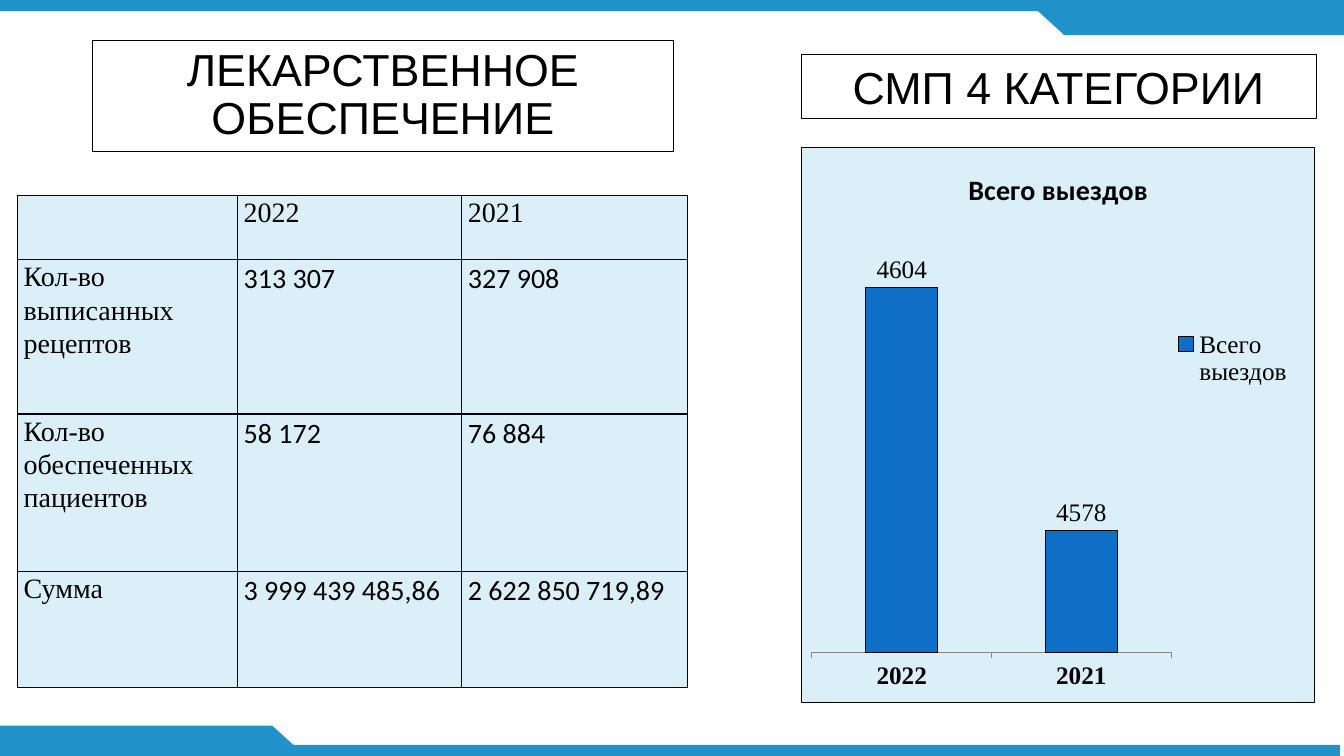
"""Build a slide with a medicine supply table and an ambulance call chart."""
from dataclasses import dataclass

from lxml import etree
from pptx import Presentation
from pptx.chart import data as cd
from pptx.dml import color
from pptx.enum import chart as ch, shapes, text
from pptx.oxml import ns
from pptx.util import Pt

BLACK, BAND, PALE, BAR = "000000", "2191C9", "DBEFF9", "0F6FC6"
SERIF, SANS = "Times New Roman", "Calibri"


@dataclass
class Box:
    x: float
    y: float
    w: float
    h: float

    def lengths(self) -> tuple:
        return Pt(self.x), Pt(self.y), Pt(self.w), Pt(self.h)


@dataclass
class Band:
    box: Box
    kind: shapes.MSO_SHAPE = shapes.MSO_SHAPE.RECTANGLE
    turn: float = 0


@dataclass
class Heading:
    words: str
    box: Box
    spacing: float


MERGE = shapes.MSO_SHAPE.FLOWCHART_MERGE
BANDS = [
    Band(Box(0, 0, 960, 8)),
    Band(Box(0, 532, 957, 8)),
    Band(Box(759.6, 3.6, 200.4, 21.6)),
    Band(Box(736, 3, 47.5, 21.6), MERGE),
    Band(Box(0, 518.4, 194.4, 21.6)),
    Band(Box(170.8, 518.4, 47.5, 21.6), MERGE, 180),
]
HEADINGS = [
    Heading("ЛЕКАРСТВЕННОЕ ОБЕСПЕЧЕНИЕ", Box(66, 28.8, 415.2, 79.6), 0.9),
    Heading("СМП 4 КАТЕГОРИИ", Box(572.2, 38.8, 368, 46), 1),
]
TABLE_BOX = Box(12.4, 139.5, 478.8, 351.4)
COLUMNS = [157.2, 160.2, 161.4]
ROWS = [46, 110.2, 112.4, 82.8]
CELLS = [
    ["", "2022", "2021"],
    ["Кол-во выписанных рецептов", "313 307", "327 908"],
    ["Кол-во обеспеченных пациентов", "58 172", "76 884"],
    ["Сумма", "3 999 439 485,86", "2 622 850 719,89"],
]
CHART_BOX = Box(572.2, 105.3, 367.4, 396.6)


def rgb(code: str) -> color.RGBColor:
    return color.RGBColor.from_string(code)


def style(font, name: str, size: float, bold: bool = False) -> None:
    font.name, font.size, font.bold = name, Pt(size), bold
    font.color.rgb = rgb(BLACK)


def paint(fmt, fill: str) -> None:
    fmt.fill.solid()
    fmt.fill.fore_color.rgb = rgb(fill)


def outline(line) -> None:
    line.color.rgb = rgb(BLACK)
    line.width = Pt(0.75)


def add_band(s, band: Band) -> None:
    sp = s.shapes.add_shape(band.kind, *band.box.lengths())
    sp.shadow.inherit = False
    sp.rotation = band.turn
    paint(sp, BAND)
    sp.line.fill.background()


def add_heading(s, heading: Heading) -> None:
    sp = s.shapes.add_shape(shapes.MSO_SHAPE.RECTANGLE, *heading.box.lengths())
    sp.shadow.inherit = False
    sp.fill.background()
    outline(sp.line)
    tf = sp.text_frame
    tf.word_wrap = True
    tf.vertical_anchor = text.MSO_ANCHOR.MIDDLE
    p = tf.paragraphs[0]
    p.text = heading.words
    p.alignment = text.PP_ALIGN.CENTER
    p.line_spacing = heading.spacing
    style(p.font, "Arial", 32)


def add_borders(cell) -> None:
    props = cell._tc.get_or_add_tcPr()
    for side in ("a:lnL", "a:lnR", "a:lnT", "a:lnB"):
        line = etree.SubElement(props, ns.qn(side), w=str(Pt(1)))
        fill = etree.SubElement(line, ns.qn("a:solidFill"))
        etree.SubElement(fill, ns.qn("a:srgbClr"), val=BLACK)


def add_supply_table(s) -> None:
    table = s.shapes.add_table(len(ROWS), len(COLUMNS), *TABLE_BOX.lengths()).table
    table.first_row = table.horz_banding = False
    for column, width in zip(table.columns, COLUMNS):
        column.width = Pt(width)
    for i, (row, height) in enumerate(zip(table.rows, ROWS)):
        row.height = Pt(height)
        for j, cell in enumerate(row.cells):
            add_borders(cell)
            paint(cell, PALE)
            cell.margin_left = cell.margin_right = Pt(4.5)
            cell.margin_top = cell.margin_bottom = 0
            p = cell.text_frame.paragraphs[0]
            p.text = CELLS[i][j]
            p.alignment = text.PP_ALIGN.JUSTIFY
            p.line_spacing = 1.07
            style(p.font, SANS if i and j else SERIF, 20)


def make_layout(box: Box, inner: bool = False):
    layout = etree.Element(ns.qn("c:layout"))
    manual = etree.SubElement(layout, ns.qn("c:manualLayout"))
    values = [("xMode", "edge"), ("yMode", "edge"),
              ("x", box.x), ("y", box.y), ("w", box.w), ("h", box.h)]
    if inner:
        values.insert(0, ("layoutTarget", "inner"))
    for tag, value in values:
        etree.SubElement(manual, ns.qn(f"c:{tag}"), val=str(value))
    return layout


def add_calls_chart(s) -> None:
    data = cd.CategoryChartData()
    data.categories = ["2022", "2021"]
    data.add_series("Всего выездов", [4604, 4578])
    chart = s.shapes.add_chart(ch.XL_CHART_TYPE.COLUMN_CLUSTERED,
                               *CHART_BOX.lengths(), data).chart
    style(chart.font, SANS, 18)

    chart.has_title = True
    p = chart.chart_title.text_frame.paragraphs[0]
    p.text = "Всего выездов"
    style(p.font, SANS, 20, True)
    chart.chart_title.include_in_layout = False

    chart.has_legend = True
    legend = chart.legend
    legend.position = ch.XL_LEGEND_POSITION.RIGHT
    legend.include_in_layout = False
    style(legend.font, SERIF, 18)
    legend._element.find(ns.qn("c:legendPos")).addnext(
        make_layout(Box(0.7, 0.32, 0.28, 0.12)))

    years, calls = chart.category_axis, chart.value_axis
    style(years.tick_labels.font, SERIF, 18, True)
    years.major_tick_mark = ch.XL_TICK_MARK.OUTSIDE
    years.format.line.color.rgb = rgb("868686")
    calls.visible = calls.has_major_gridlines = False
    calls.minimum_scale, calls.maximum_scale = 4565, 4610

    plot = chart.plots[0]
    plot.gap_width = 150
    plot.vary_by_categories = False
    plot.has_data_labels = True
    plot.data_labels.show_value = True
    plot.data_labels.position = ch.XL_LABEL_POSITION.OUTSIDE_END
    style(plot.data_labels.font, SERIF, 18)
    bars = plot.series[0]
    paint(bars.format, BAR)
    outline(bars.format.line)

    space = chart._chartSpace
    area = space.find(".//" + ns.qn("c:plotArea"))
    for old in area.findall(ns.qn("c:layout")):
        area.remove(old)
    area.insert(0, make_layout(Box(0.02, 0.15, 0.7, 0.76), True))
    props = etree.Element(ns.qn("c:spPr"))
    space.find(ns.qn("c:chart")).addnext(props)
    fill = etree.SubElement(props, ns.qn("a:solidFill"))
    etree.SubElement(fill, ns.qn("a:srgbClr"), val=PALE)
    line = etree.SubElement(props, ns.qn("a:ln"), w=str(Pt(0.75)))
    fill = etree.SubElement(line, ns.qn("a:solidFill"))
    etree.SubElement(fill, ns.qn("a:srgbClr"), val=BLACK)


def main() -> None:
    prs = Presentation()
    prs.slide_width, prs.slide_height = Pt(960), Pt(540)
    s = prs.slides.add_slide(prs.slide_layouts[6])
    for band in BANDS:
        add_band(s, band)
    for heading in HEADINGS:
        add_heading(s, heading)
    add_supply_table(s)
    add_calls_chart(s)
    prs.save("out.pptx")


if __name__ == "__main__":
    main()
